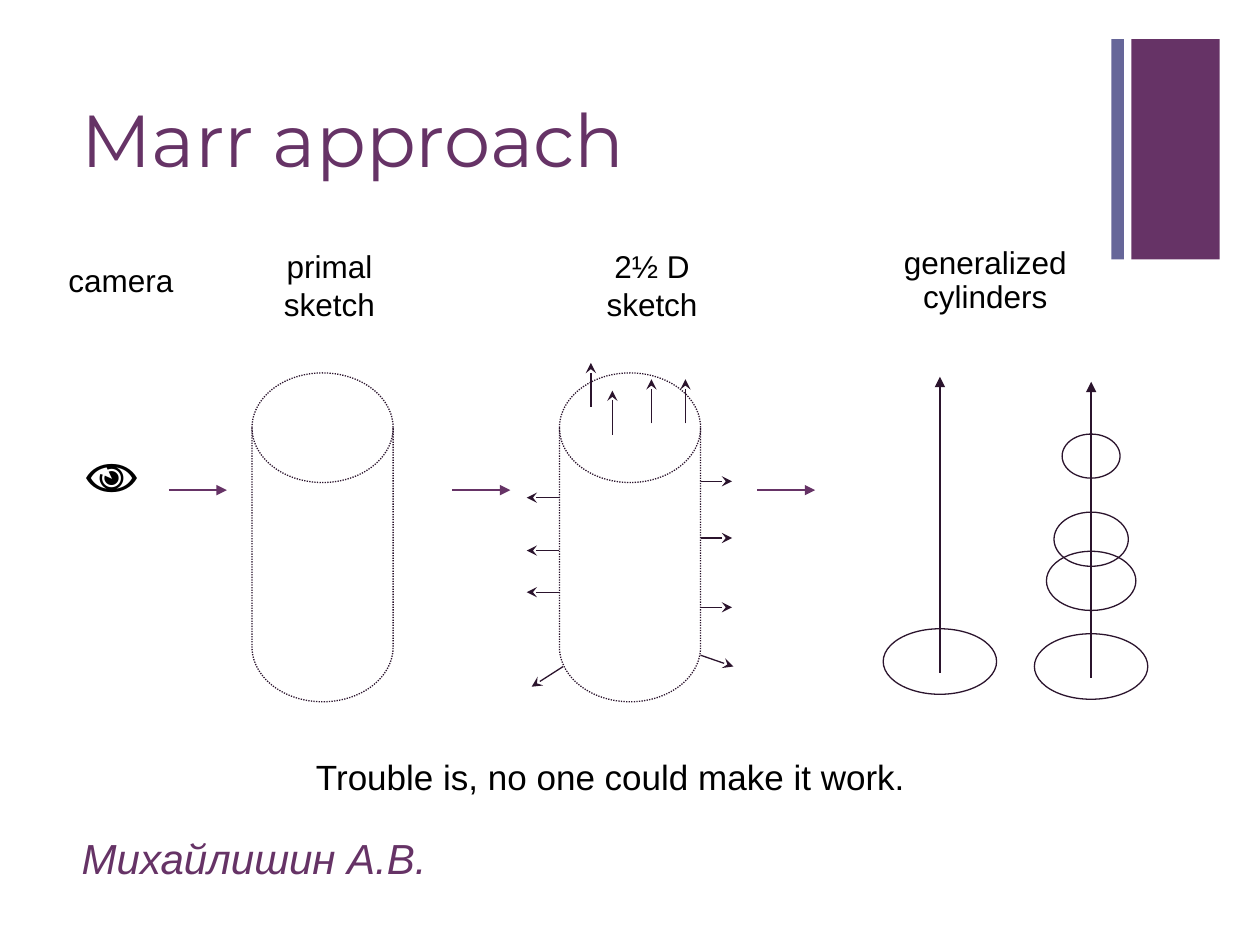
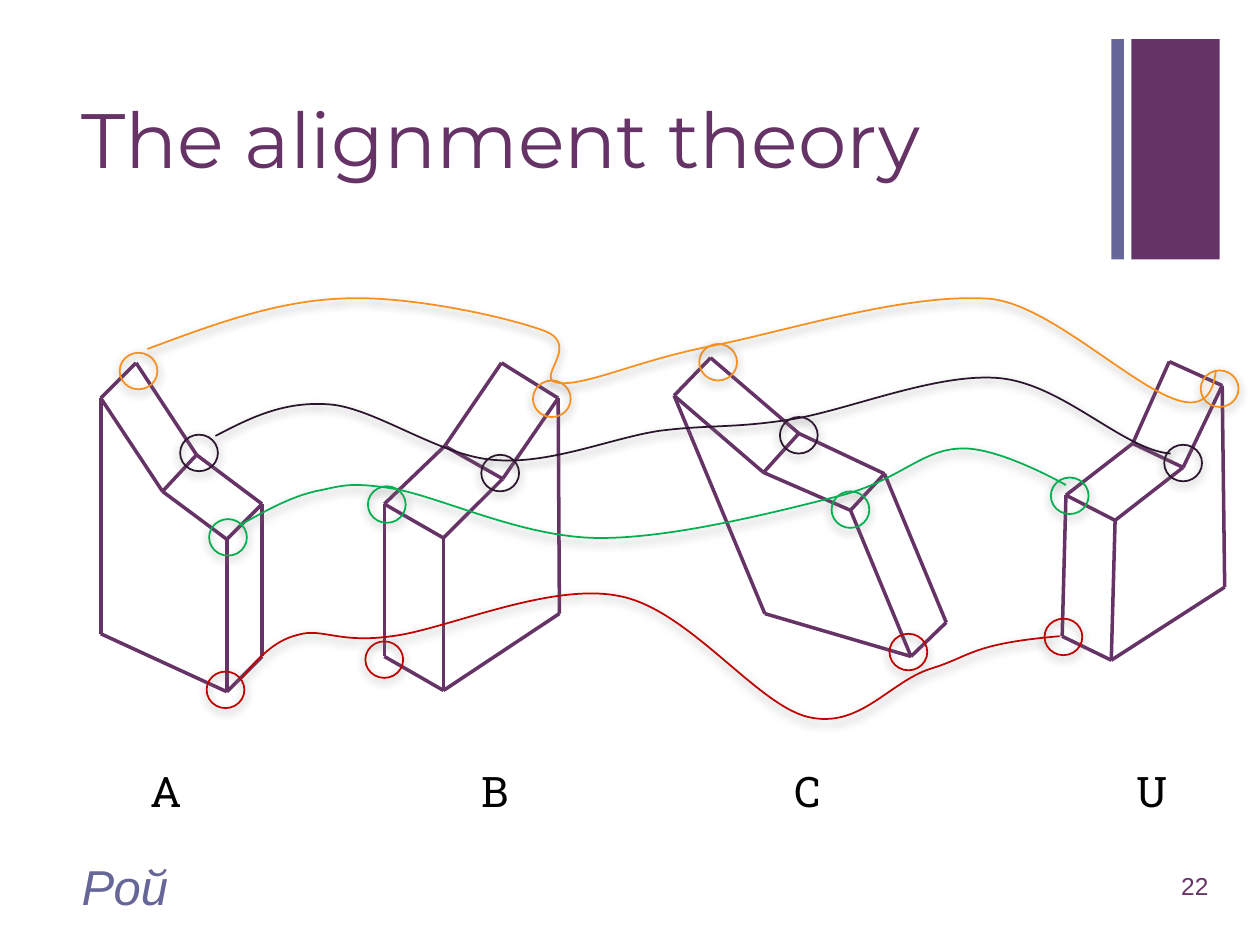
from dataclasses import dataclass

from lxml import etree
from pptx import Presentation
from pptx.dml.color import RGBColor
from pptx.enum.dml import MSO_LINE
from pptx.enum.shapes import MSO_CONNECTOR, MSO_SHAPE
from pptx.enum.text import MSO_ANCHOR, MSO_AUTO_SIZE, PP_ALIGN
from pptx.oxml.ns import qn
from pptx.util import Inches, Pt

RECT, OVAL = MSO_SHAPE.RECTANGLE, MSO_SHAPE.OVAL
CYLINDER = MSO_SHAPE.FLOWCHART_MAGNETIC_DISK
STRAIGHT, DOTTED = MSO_CONNECTOR.STRAIGHT, MSO_LINE.ROUND_DOT
TOP, MIDDLE = MSO_ANCHOR.TOP, MSO_ANCHOR.MIDDLE
LEFT, CENTER, RIGHT = PP_ALIGN.LEFT, PP_ALIGN.CENTER, PP_ALIGN.RIGHT

PLUM, SLATE, INK, BLACK = "663366", "666699", "2B142D", "000000"
ORANGE, GREEN, RED = "F7901E", "00B050", "C00000"
HEAD_FONT, BODY_FONT, LETTER_FONT = "Montserrat", "Arial", "Roboto Slab"

# The slide is a grid of square cells: 10 columns by 7.5 rows.
WIDTH, HEIGHT = Inches(10), Inches(7.5)
COLUMNS = 10
CELL = WIDTH // COLUMNS

Point = tuple[float, float]
Box = tuple[float, float, float, float]


@dataclass
class Label:
    text: str
    box: Box
    size: float
    color: str = BLACK
    font: str = BODY_FONT
    align: PP_ALIGN = LEFT
    anchor: MSO_ANCHOR = TOP
    italic: bool = False
    spacing: float = 1.0
    inset: float = 0.1
    wrap: bool = True


@dataclass
class Track:
    """One feature followed through all four views."""
    color: str
    rings: list[Point]
    curve: list[Point]


def cells(*values: float) -> list[int]:
    return [round(v * CELL) for v in values]


def rgb(color: str) -> RGBColor:
    return RGBColor.from_string(color)


def add_label(s, label: Label) -> None:
    tf = s.shapes.add_textbox(*cells(*label.box)).text_frame
    tf.word_wrap = label.wrap
    tf.auto_size = MSO_AUTO_SIZE.NONE if label.wrap else MSO_AUTO_SIZE.SHAPE_TO_FIT_TEXT
    tf.vertical_anchor = label.anchor
    tf.margin_left = tf.margin_right = CELL // 10
    tf.margin_top = tf.margin_bottom = cells(label.inset)[0]
    p = tf.paragraphs[0]
    p.text, p.alignment, p.line_spacing = label.text, label.align, label.spacing
    p.font.name, p.font.size = label.font, Pt(label.size)
    p.font.italic, p.font.color.rgb = label.italic, rgb(label.color)


def style_outline(sp, color: str, width: float) -> None:
    sp.shadow.inherit = False
    sp.fill.background()
    sp.line.color.rgb = rgb(color)
    sp.line.width = Pt(width)


def add_outline(s, kind: MSO_SHAPE, box: Box, color: str = INK, width: float = 0.75):
    sp = s.shapes.add_shape(kind, *cells(*box))
    style_outline(sp, color, width)
    return sp


def add_soft_shadow(sp) -> None:
    effects = sp._element.spPr.find(qn("a:effectLst"))
    shadow = etree.SubElement(effects, qn("a:outerShdw"), blurRad=str(Pt(5)),
                              dist=str(Pt(2)), dir="5400000", rotWithShape="0")
    tone = etree.SubElement(shadow, qn("a:srgbClr"), val="808080")
    etree.SubElement(tone, qn("a:alpha"), val="75000")


def add_line(s, start: Point, end: Point, color: str, width: float, tail: str = "") -> None:
    line = s.shapes.add_connector(STRAIGHT, *cells(*start, *end))
    line.line.color.rgb = rgb(color)
    line.line.width = Pt(width)
    sp_pr = line._element.spPr
    if tail:
        etree.SubElement(sp_pr.find(qn("a:ln")), qn("a:tailEnd"), type=tail)
    etree.SubElement(sp_pr, qn("a:effectLst"))


def add_curve(s, points: list[Point], color: str):
    """Draw cubic curves: a start point, then two controls and an end for each."""
    spots = [cells(*point) for point in points]
    builder = s.shapes.build_freeform(*spots[0], scale=1.0)
    builder.add_line_segments(spots[3::3], close=False)
    sp = builder.convert_to_shape()
    segments = list(sp._element.iter(qn("a:lnTo")))
    for i, segment in enumerate(segments):
        segment.tag = qn("a:cubicBezTo")
        segment.clear()
        for x, y in spots[3 * i + 1:3 * i + 4]:
            etree.SubElement(segment, qn("a:pt"), x=str(x - sp.left), y=str(y - sp.top))
    style_outline(sp, color, 1)
    return sp


def add_base(prs, title: str, size: float):
    """Add a slide with the corner bands and the title."""
    s = prs.slides.add_slide(prs.slide_layouts[6])
    for left, width, color in ((8.98, 0.7, PLUM), (8.82, 0.1, SLATE)):
        sp = s.shapes.add_shape(RECT, *cells(left, 0.31, width, 1.75))
        sp.shadow.inherit = False
        sp.fill.solid()
        sp.fill.fore_color.rgb = rgb(color)
        sp.line.fill.background()
    add_label(s, Label(title, (0.55, 0.53, 8.26, 1.22), size, PLUM, HEAD_FONT,
                       anchor=MIDDLE, spacing=0.9))
    return s


STAGES = [
    Label("camera", (0.44, 1.97, 1.04, 0.57), 18, align=CENTER),
    Label("primal sketch", (2.11, 1.86, 1.01, 0.57), 18, align=CENTER),
    Label("2½ D sketch", (4.55, 1.86, 1.25, 0.57), 18, align=CENTER),
    Label("generalized cylinders", (7.01, 1.86, 1.62, 0.57), 18, align=CENTER, spacing=0.9),
]
MARR_TEXTS = [
    Label("Михайлишин А.В.", (0.55, 6.51, 4.3, 0.67), 24, PLUM, italic=True),
    Label("👁", (0.58, 3.42, 0.63, 0.96), 30, font=LETTER_FONT),
    Label("Trouble is, no one could make it work.", (2.41, 5.9, 4.9, 0.67), 20),
]
CYLINDER_LEFTS = (2, 4.44)
FLOW_LEFTS, FLOW_ROW, FLOW_LENGTH = (1.34, 3.59, 6.01), 3.89, 0.46
SURFACE_NORMALS = [
    *(((5.56, y), (5.81, y)) for y in (3.82, 4.27, 4.82)),
    ((5.56, 5.2), (5.82, 5.29)),
    *(((4.44, y), (4.18, y)) for y in (3.95, 4.37, 4.7)),
    ((4.47, 5.29), (4.22, 5.45)),
    *(((x, y), (x, y - 0.35)) for x, y in
      ((4.69, 3.23), (4.86, 3.45), (5.17, 3.36), (5.44, 3.36))),
]
AXES = [(7.46, 5.34), (8.66, 5.38)]
AXIS_LENGTH = 2.35
# Centre, width and height of each cross-section.
SECTIONS = [(7.46, 5.25, 0.9, 0.52), (8.66, 5.29, 0.9, 0.52), (8.66, 4.61, 0.71, 0.47),
            (8.66, 4.28, 0.59, 0.43), (8.66, 3.62, 0.46, 0.35)]


def build_marr(prs) -> None:
    s = add_base(prs, "Marr approach", 42)
    for label in STAGES + MARR_TEXTS:
        add_label(s, label)
    for left in CYLINDER_LEFTS:
        add_outline(s, CYLINDER, (left, 2.96, 1.12, 2.61)).line.dash_style = DOTTED
    for x in FLOW_LEFTS:
        add_line(s, (x, FLOW_ROW), (x + FLOW_LENGTH, FLOW_ROW), PLUM, 0.75, "triangle")
    for start, end in SURFACE_NORMALS:
        add_line(s, start, end, INK, 0.75, "stealth")
    for x, y in AXES:
        add_line(s, (x, y), (x, y - AXIS_LENGTH), INK, 1.5, "triangle")
    for x, y, width, height in SECTIONS:
        add_outline(s, OVAL, (x - width / 2, y - height / 2, width, height))


# Every view shows the same solid: nine corners joined by the same edges.
EDGES = [(0, 1), (0, 2), (1, 3), (2, 3), (2, 4), (3, 5),
         (4, 5), (4, 6), (5, 7), (6, 7), (6, 8), (0, 8)]
VIEWS = {
    "A": [(0.8, 3.16), (1.08, 2.88), (1.29, 3.9), (1.56, 3.61), (1.8, 4.28),
          (2.08, 4), (1.8, 5.49), (2.08, 5.21), (0.8, 5.03)],
    "B": [(4.43, 3.16), (3.98, 2.88), (3.99, 3.8), (3.53, 3.54), (3.52, 4.27),
          (3.05, 4), (3.52, 5.48), (3.05, 5.21), (4.44, 4.87)],
    "C": [(5.35, 3.14), (5.64, 2.84), (6.06, 3.75), (6.34, 3.44), (6.75, 4.05),
          (7.02, 3.76), (7.23, 5.21), (7.51, 4.94), (6.07, 4.87)],
    "U": [(9.7, 3.06), (9.28, 2.87), (9.39, 3.71), (8.99, 3.52), (8.85, 4.13),
          (8.46, 3.93), (8.82, 5.24), (8.43, 5.05), (9.72, 4.66)],
}
LETTER_BOXES = {"A": (1.1, 0.44), "B": (3.72, 0.4), "C": (6.21, 0.46), "U": (8.92, 0.43)}
RING_SIZE = (0.3, 0.29)
TRACKS = [
    Track(ORANGE, [(0.95, 2.8), (4.23, 3.02), (5.55, 2.73), (9.53, 2.94)],
          [(1.17, 2.77), (1.68, 2.58), (2.19, 2.39), (2.71, 2.37),
           (3.24, 2.34), (4.04, 2.52), (4.33, 2.63), (4.62, 2.75), (4.22, 3.02), (4.44, 3.04),
           (4.66, 3.06), (5.07, 2.86), (5.63, 2.75), (6.2, 2.64), (7.16, 2.33), (7.83, 2.37),
           (8.5, 2.4), (9.56, 3.74), (9.65, 2.94)]),
    Track(INK, [(1.43, 3.45), (3.82, 3.61), (6.19, 3.31), (9.24, 3.53)],
          [(1.71, 3.46), (1.98, 3.32), (2.25, 3.18), (2.62, 3.21),
           (2.98, 3.24), (3.49, 3.62), (3.92, 3.65), (4.36, 3.69), (4.84, 3.48), (5.23, 3.42),
           (5.62, 3.37), (5.82, 3.4), (6.27, 3.33), (6.72, 3.26), (7.42, 2.96), (7.92, 3),
           (8.43, 3.04), (8.91, 3.57), (9.29, 3.6)]),
    Track(GREEN, [(1.66, 4.12), (2.92, 3.86), (6.6, 3.9), (8.34, 3.79)],
          [(1.9, 4.17), (2.1, 4.06), (2.29, 3.95), (2.5, 3.9),
           (2.71, 3.86), (2.76, 3.82), (3.13, 3.88), (3.51, 3.95), (4.14, 4.26), (4.73, 4.27),
           (5.32, 4.28), (6.17, 4.06), (6.65, 3.94), (7.13, 3.82), (7.31, 3.57), (7.62, 3.56),
           (7.92, 3.54), (8.46, 3.85), (8.46, 3.85)]),
    Track(RED, [(1.64, 5.33), (2.9, 5.09), (7.06, 5.03), (8.29, 4.91)],
          [(1.92, 5.38), (2.04, 5.24), (2.16, 5.09), (2.36, 5.04),
           (2.56, 4.98), (2.68, 5.11), (3.11, 5.05), (3.53, 5), (4.36, 4.62), (4.91, 4.73),
           (5.46, 4.83), (6, 5.59), (6.41, 5.69), (6.82, 5.79), (7.05, 5.42), (7.38, 5.31),
           (7.71, 5.21), (7.7, 5.11), (8.41, 5.05)]),
]
FOOTERS = [
    Label("22", (9.08, 6.83, 0.61, 0.4), 14, PLUM, align=RIGHT, anchor=MIDDLE, inset=0.05),
    Label("Рой", (0.55, 6.83, 6.7, 0.4), 28, SLATE, anchor=MIDDLE, italic=True, inset=0.05),
]


def build_alignment(prs) -> None:
    s = add_base(prs, "The alignment theory", 44)
    for footer in FOOTERS:
        add_label(s, footer)
    for corners in VIEWS.values():
        for a, b in EDGES:
            add_line(s, corners[a], corners[b], PLUM, 2)
    for track in TRACKS:
        for corner in track.rings:
            add_soft_shadow(add_outline(s, OVAL, (*corner, *RING_SIZE), track.color, 1))
    for track in TRACKS:
        add_soft_shadow(add_curve(s, track.curve, track.color))
    for letter, (left, width) in LETTER_BOXES.items():
        add_label(s, Label(letter, (left, 6.03, width, 0.5), 24, font=LETTER_FONT,
                           inset=0.05, wrap=False))


def main() -> None:
    prs = Presentation()
    prs.slide_width, prs.slide_height = WIDTH, HEIGHT
    build_marr(prs)
    build_alignment(prs)
    prs.save("out.pptx")


if __name__ == "__main__":
    main()
